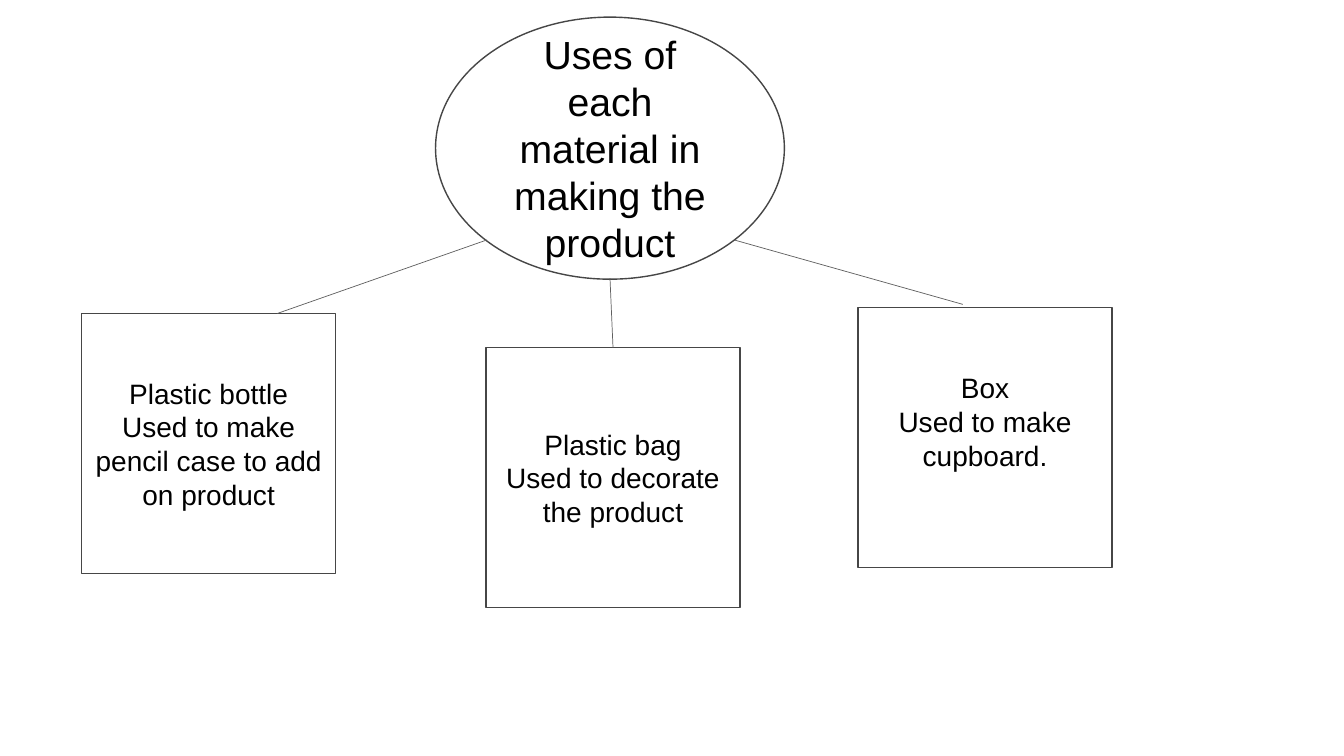
from pptx import Presentation
from pptx.dml.color import RGBColor
from pptx.enum.shapes import MSO_CONNECTOR, MSO_SHAPE
from pptx.enum.text import MSO_ANCHOR, PP_ALIGN
from pptx.oxml.ns import qn
from pptx.util import Inches, Pt
from lxml.etree import SubElement

BLACK = RGBColor(0x00, 0x00, 0x00)
WHITE = RGBColor(0xFF, 0xFF, 0xFF)
OUTLINE = RGBColor(0x46, 0x46, 0x46)
LINK = RGBColor(0x5F, 0x5F, 0x5F)

TOPIC = "Uses of each material in making the product"
TOPIC_AREA = (4.32, 0.17, 3.46, 2.6)
BOX_W, BOX_H = 2.52, 2.58
MATERIALS = [
    {"text": "Plastic bottle\nUsed to make pencil case to add on product",
     "at": (0.81, 3.11), "bottom": 0.05, "link": (4.83, 2.38, 2.75, 3.11), "joined": False},
    {"text": "Plastic bag\nUsed to decorate the product",
     "at": (4.82, 3.45), "bottom": 0.05, "link": (6.05, 2.76, 6.08, 3.45), "joined": True},
    {"text": "Box\nUsed to make cupboard.",
     "at": (8.51, 3.05), "bottom": 0.37, "link": (7.28, 2.38, 9.55, 3.02), "joined": False},
]


def add_node(s, kind, area, text, size, bottom=0.05):
    """Add an outlined shape with centred text."""
    sp = s.shapes.add_shape(kind, *map(Inches, area))
    sp.shadow.inherit = False
    sp.fill.solid()
    sp.fill.fore_color.rgb = WHITE
    sp.line.color.rgb = OUTLINE
    sp.line.width = Pt(1)
    tf = sp.text_frame
    tf.text = text
    tf.word_wrap = True
    tf.vertical_anchor = MSO_ANCHOR.MIDDLE
    tf.margin_bottom = Inches(bottom)
    for p in tf.paragraphs:
        p.alignment = PP_ALIGN.CENTER
        for r in p.runs:
            r.font.name = "Arial"
            r.font.size = Pt(size)
            r.font.color.rgb = BLACK
    return sp


def add_link(s, ends):
    """Add a thin straight connector without a shadow."""
    link = s.shapes.add_connector(MSO_CONNECTOR.STRAIGHT, *map(Inches, ends))
    link.line.color.rgb = LINK
    link.line.width = Pt(0.5)
    SubElement(link._element.spPr, qn("a:effectLst"))
    return link


def main():
    """Build the slide and save it."""
    prs = Presentation()
    prs.slide_width, prs.slide_height = Inches(13.33), Inches(7.5)
    s = prs.slides.add_slide(prs.slide_layouts[6])
    add_node(s, MSO_SHAPE.OVAL, TOPIC_AREA, TOPIC, 28)
    for m in MATERIALS:
        box = add_node(s, MSO_SHAPE.RECTANGLE, (*m["at"], BOX_W, BOX_H),
                       m["text"], 20, m["bottom"])
        link = add_link(s, m["link"])
        if m["joined"]:
            link.end_connect(box, 0)
    prs.save("out.pptx")


if __name__ == "__main__":
    main()
